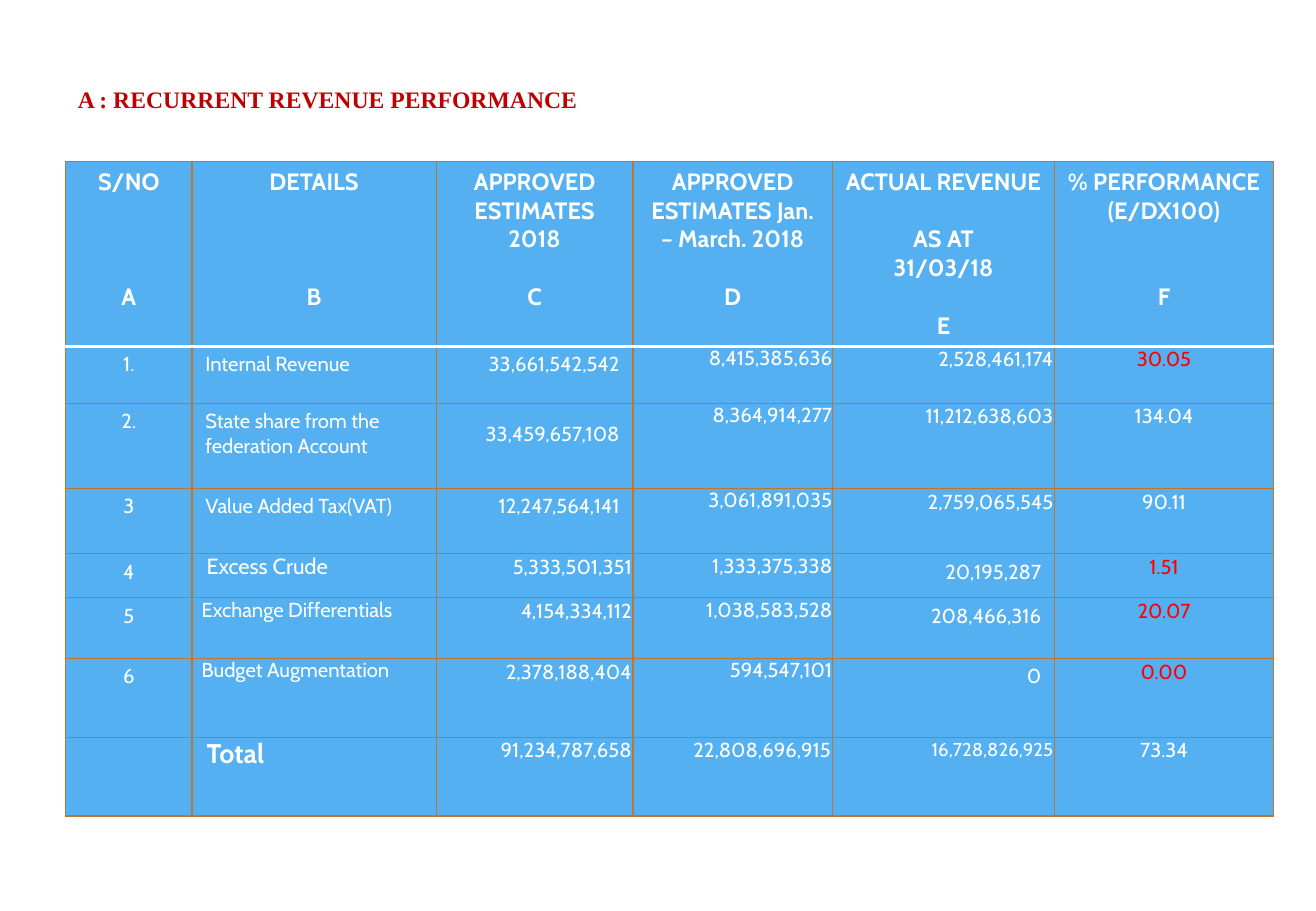
from lxml import etree
from pptx import Presentation
from pptx.dml.color import RGBColor
from pptx.enum.text import MSO_ANCHOR, PP_ALIGN
from pptx.oxml.ns import qn
from pptx.util import Inches, Pt

LEFT, CENTER, RIGHT = PP_ALIGN.LEFT, PP_ALIGN.CENTER, PP_ALIGN.RIGHT
TOP, MIDDLE = MSO_ANCHOR.TOP, MSO_ANCHOR.MIDDLE

# Content: each heading is a list of (blank lines before, text)
TITLE = "A : RECURRENT REVENUE PERFORMANCE"
HEADINGS = [
    [(0, "S/NO"), (3, "A")],
    [(0, "DETAILS"), (3, "B")],
    [(0, "APPROVED ESTIMATES 2018"), (1, "C")],
    [(0, "APPROVED ESTIMATES Jan. – March. 2018"), (1, "D")],
    [(0, "ACTUAL REVENUE"), (1, "AS AT"), (0, "31/03/18"), (1, "E")],
    [(0, "% PERFORMANCE (E/DX100)"), (2, "F")],
]
REVENUE = [
    ("1.", "Internal Revenue", "33,661,542,542", "8,415,385,636", "2,528,461,174", "30.05"),
    ("2.", "State share from the federation Account", "33,459,657,108",
     "8,364,914,277", "11,212,638,603", "134.04"),
    ("3", "Value Added Tax(VAT)", "12,247,564,141", "3,061,891,035", "2,759,065,545", "90.11"),
    ("4", "Excess Crude", "5,333,501,351", "1,333,375,338", "20,195,287", "1.51"),
    ("5", "Exchange Differentials", "4,154,334,112", "1,038,583,528", "208,466,316", "20.07"),
    ("6", "Budget Augmentation", "2,378,188,404", "594,547,101", "0", "0.00"),
    ("", "Total", "91,234,787,658", "22,808,696,915", "16,728,826,925", "73.34"),
]

# Format
COLORS = {"title": "C00000", "cell": "54B0F0", "text": "FFFFFF",
          "low": "FF0000", "border": "C17529", "rule": "FFFFFF"}
COL_WIDTHS = [1.04, 2.01, 1.62, 1.64, 1.83, 1.8]
ROW_HEIGHTS = [1.5, 0.47, 0.7, 0.54, 0.36, 0.5, 0.65, 0.65]
ALIGNMENTS = [CENTER, LEFT, RIGHT, RIGHT, RIGHT, CENTER]
LOW_LIMIT = 50
HEADING_LINE = 17
BORDER_WIDTH, RULE_WIDTH = 0.79, 2

# Cell insets: left, top, right, bottom
INSETS = {"W": (0.11, 0.05, 0.11, 0.05), "T": (0.01, 0.01, 0.01, 0),
          "N": (0, 0, 0, 0), "I": (0.08, 0, 0, 0), "J": (0.12, 0, 0, 0)}
ROW_INSETS = ["WWWNTT"] * 3 + ["WJTNWT"] + ["WITNWT"] * 2 + ["WJTTTT"]
SPECIAL_FONTS = {"Excess Crude": {"size": Pt(13)},
                 "Total": {"size": Pt(16), "bold": True},
                 "16,728,826,925": {"size": Pt(11)}}
LINE_SPACING = {"33,459,657,108": 1.5}


def set_all(target, values):
    for name, value in values.items():
        setattr(target, name, value)


def write(paragraph, text, color, align, **font):
    run = paragraph.add_run()
    run.text = text
    paragraph.alignment = align
    set_all(run.font, {"name": "Cabin", "size": Pt(12), "bold": False, **font})
    run.font.color.rgb = RGBColor.from_string(COLORS[color])


def set_border(cell, side, color, width):
    line = etree.SubElement(cell._tc.get_or_add_tcPr(), qn(f"a:ln{side}"),
                            w=str(Pt(width)))
    fill = etree.SubElement(line, qn("a:solidFill"))
    etree.SubElement(fill, qn("a:srgbClr"), val=COLORS[color])


def style_cell(cell, row, inset):
    margins = ("margin_left", "margin_top", "margin_right", "margin_bottom")
    set_all(cell, dict(zip(margins, map(Inches, INSETS[inset]))))
    cell.vertical_anchor = TOP
    # Borders come before the fill in the cell properties
    for side in "LRTB":
        under_heading = (row, side) in ((0, "B"), (1, "T"))
        set_border(cell, side, *(("rule", RULE_WIDTH) if under_heading
                                 else ("border", BORDER_WIDTH)))
    cell.fill.solid()
    cell.fill.fore_color.rgb = RGBColor.from_string(COLORS["cell"])


def main():
    prs = Presentation()
    prs.slide_width, prs.slide_height = Inches(10.83), Inches(7.5)
    slide = prs.slides.add_slide(prs.slide_layouts[5])
    left, width = Inches(0.54), Inches(sum(COL_WIDTHS))

    # Title
    title = slide.shapes.title
    set_all(title, {"left": left, "top": Inches(0.4),
                    "width": width, "height": Inches(0.88)})
    set_all(title.text_frame, {"vertical_anchor": MIDDLE, "word_wrap": True,
                               "margin_left": Inches(0.1), "margin_top": Inches(0.05),
                               "margin_bottom": Inches(0.1)})
    write(title.text_frame.paragraphs[0], TITLE, "title", LEFT,
          name="Times New Roman", size=Pt(14), bold=True)

    # Table grid
    table = slide.shapes.add_table(len(ROW_HEIGHTS), len(COL_WIDTHS), left, Inches(1.33),
                                   width, Inches(sum(ROW_HEIGHTS))).table
    for column, share in zip(table.columns, COL_WIDTHS):
        column.width = Inches(share)
    for row, share in zip(table.rows, ROW_HEIGHTS):
        row.height = Inches(share)

    # Heading row
    for col, lines in enumerate(HEADINGS):
        cell = table.cell(0, col)
        style_cell(cell, 0, "W")
        for i, (gap, text) in enumerate(lines):
            frame = cell.text_frame
            paragraph = frame.add_paragraph() if i else frame.paragraphs[0]
            paragraph.space_before = Pt(gap * HEADING_LINE)
            write(paragraph, text, "text", CENTER, size=Pt(14), bold=True)

    # Revenue rows
    last = len(COL_WIDTHS) - 1
    for row, (values, insets) in enumerate(zip(REVENUE, ROW_INSETS), 1):
        for col, (text, inset) in enumerate(zip(values, insets)):
            cell = table.cell(row, col)
            style_cell(cell, row, inset)
            if not text:
                continue
            paragraph = cell.text_frame.paragraphs[0]
            low = col == last and float(text) < LOW_LIMIT
            write(paragraph, text, "low" if low else "text", ALIGNMENTS[col],
                  **SPECIAL_FONTS.get(text, {}))
            paragraph.line_spacing = LINE_SPACING.get(text)

    prs.save("out.pptx")


if __name__ == "__main__":
    main()
